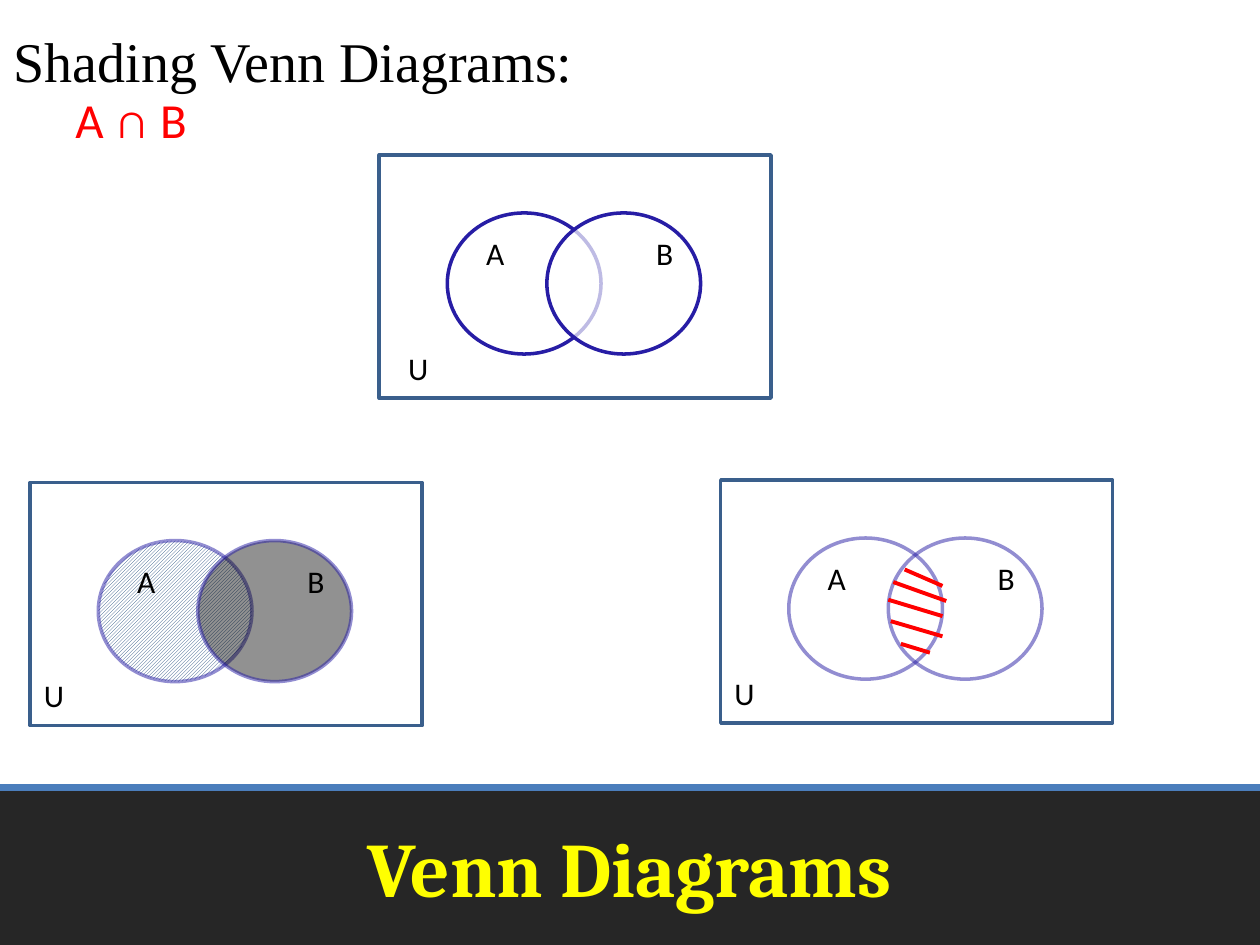
from lxml import etree
from pptx import Presentation
from pptx.dml.color import RGBColor
from pptx.enum.dml import MSO_PATTERN
from pptx.enum.shapes import MSO_CONNECTOR, MSO_SHAPE
from pptx.enum.text import MSO_ANCHOR, PP_ALIGN
from pptx.oxml.ns import qn
from pptx.util import Inches, Pt

RECT, OVAL = MSO_SHAPE.RECTANGLE, MSO_SHAPE.OVAL
STRAIGHT = MSO_CONNECTOR.STRAIGHT
UP_DIAGONAL = MSO_PATTERN.LIGHT_UPWARD_DIAGONAL
CENTER, MIDDLE = PP_ALIGN.CENTER, MSO_ANCHOR.MIDDLE
color = RGBColor.from_string

prs = Presentation()
prs.slide_width, prs.slide_height = Inches(10), Inches(7.5)
slide = prs.slides.add_slide(prs.slide_layouts[5])
shapes = slide.shapes


def add_text(text, left, top, width, height, size, font, ink):
    box = shapes.add_textbox(Inches(left), Inches(top), Inches(width), Inches(height))
    box.text_frame.word_wrap = True
    paragraph = box.text_frame.paragraphs[0]
    paragraph.text = text
    style = paragraph.runs[0].font
    style.size, style.name = Pt(size), font
    style.color.rgb = color(ink)
    return paragraph


def set_opacity(fill_parent, percent):
    rgb = fill_parent.find(qn("a:solidFill")).find(qn("a:srgbClr"))
    etree.SubElement(rgb, qn("a:alpha")).set("val", str(percent * 1000))


band = shapes.add_shape(RECT, 0, Inches(6.25), Inches(10), Inches(1.25))
band.shadow.inherit = False
band.fill.solid()
band.fill.fore_color.rgb = color("262626")
band.line.fill.background()

band_edge = shapes.add_connector(STRAIGHT, 0, Inches(6.25), Inches(10), Inches(6.25))
band_edge.line.color.rgb = color("4B7EBC")
band_edge.line.width = Pt(4)
etree.SubElement(band_edge._element.spPr, qn("a:effectLst"))

title = shapes.title
title.left, title.top = Inches(0.5), Inches(6.25)
title.width, title.height = Inches(9), Inches(1.25)
title.text_frame.text = "Venn Diagrams"
title.text_frame.vertical_anchor = MIDDLE
title_paragraph = title.text_frame.paragraphs[0]
title_paragraph.alignment = CENTER
title_font = title_paragraph.runs[0].font
title_font.size, title_font.name, title_font.bold = Pt(44), "Cambria", True
title_font.color.rgb = color("FFFF00")
band_edge._element.addnext(title._element)

heading = add_text("Shading Venn Diagrams:", 0.01, 0.16, 10, 0.58, 32, "Times New Roman", "000000")
heading.space_before = Pt(4)
heading_props = heading._p.get_or_add_pPr()
heading_props.set("marL", str(Inches(0.38)))
heading_props.set("indent", str(-Inches(0.38)))

expression = add_text("A ∩ B", 0, 0.66, 1.93, 0.57, 28, "Calibri", "FF0000")
expression.level = 1
expression._p.get_or_add_pPr().set("marL", str(Inches(0.5)))

diagrams = [
    (3.01, 1.23, 0.13, 100, [("FFFFFF", 100), ("FFFFFF", 70)]),
    (0.24, 3.83, 0.01, 50, ["hatched", ("000000", 43)]),
    (5.72, 3.81, 0.01, 50, [None, None]),
]
for left, top, u_offset, outline_opacity, circle_fills in diagrams:
    universe = shapes.add_shape(RECT, Inches(left), Inches(top), Inches(3.11), Inches(1.93))
    universe.shadow.inherit = False
    universe.fill.solid()
    universe.fill.fore_color.rgb = color("FFFFFF")
    universe.line.color.rgb = color("3A5F8C")
    universe.line.width = Pt(2)

    for offset, circle_fill in zip((0.54, 1.33), circle_fills):
        circle = shapes.add_shape(
            OVAL, Inches(left + offset), Inches(top + 0.46), Inches(1.22), Inches(1.12))
        circle.shadow.inherit = False
        if circle_fill is None:
            circle.fill.background()
        elif circle_fill == "hatched":
            circle.fill.patterned()
            circle.fill.pattern = UP_DIAGONAL
            circle.fill.fore_color.rgb = color("1F497D")
            circle.fill.back_color.rgb = color("FFFFFF")
        else:
            ink, opacity = circle_fill
            circle.fill.solid()
            circle.fill.fore_color.rgb = color(ink)
            set_opacity(circle._element.spPr, opacity)
        circle.line.color.rgb = color("271DA5")
        circle.line.width = Pt(2)
        set_opacity(circle._element.spPr.find(qn("a:ln")), outline_opacity)

    for letter, dx, dy in (("U", u_offset, 1.49), ("A", 0.75, 0.58), ("B", 2.1, 0.58)):
        add_text(letter, left + dx, top + dy, 0.32, 0.4, 18, "Calibri", "000000")

intersection = shapes.add_group_shape()
for x1, y1, x2, y2 in (
    (7.18, 4.52, 7.48, 4.65),
    (7.09, 4.62, 7.51, 4.77),
    (7.05, 4.76, 7.48, 4.89),
    (7.07, 4.93, 7.48, 5.05),
    (7.15, 5.11, 7.38, 5.18),
):
    stroke = intersection.shapes.add_connector(
        STRAIGHT, Inches(x1), Inches(y1), Inches(x2), Inches(y2))
    stroke.line.color.rgb = color("FF0000")
    stroke.line.width = Pt(2.25)
    etree.SubElement(stroke._element.spPr, qn("a:effectLst"))

prs.save("out.pptx")
